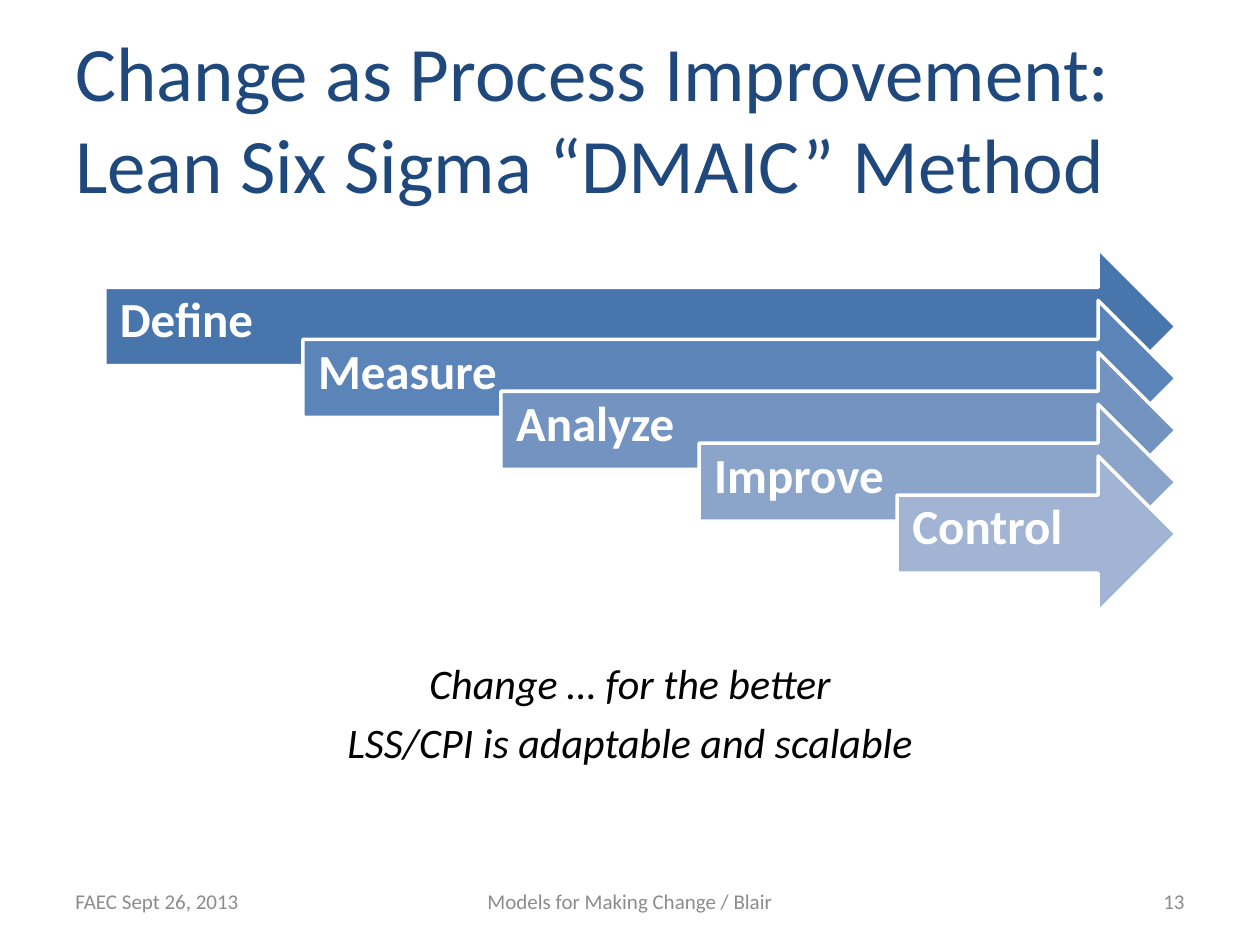
import pptx
import pptx.dml.color
import pptx.enum.shapes
import pptx.enum.text
import pptx.util

Pt = pptx.util.Pt
ALIGN = pptx.enum.text.PP_ALIGN
ANCHOR = pptx.enum.text.MSO_ANCHOR

COLORS = {"title": "1F497D", "white": "FFFFFF", "footer": "8C8C8C", "body": "000000"}
STEPS = {
    "Define": "4875AC",
    "Measure": "5B84B9",
    "Analyze": "7393C1",
    "Improve": "8BA4CA",
    "Control": "A2B4D4",
}


def rgb(value):
    return pptx.dml.color.RGBColor.from_string(value)


def add_text(page, place, lines, color, font, spacing=None, anchor=ANCHOR.MIDDLE,
             margins=(7.2, 3.6, 7.2, 3.6)):
    box = page.shapes.add_textbox(*map(Pt, place))
    frame = box.text_frame
    frame.word_wrap = True
    frame.vertical_anchor = anchor
    for side, margin in zip(("left", "top", "right", "bottom"), margins):
        setattr(frame, f"margin_{side}", Pt(margin))
    for index, line in enumerate(lines):
        para = frame.add_paragraph() if index else frame.paragraphs[0]
        for name, value in (spacing or {}).items():
            setattr(para, name, value)
        span = para.add_run()
        span.text = line
        for name, value in {"name": "Calibri", **font}.items():
            setattr(span.font, name, value)
        span.font.color.rgb = rgb(COLORS[color])
    return box


deck = pptx.Presentation()
deck.slide_width, deck.slide_height = Pt(720), Pt(540)
page = deck.slides.add_slide(deck.slide_layouts[6])

# Title
add_text(page, (36, 21.6, 648, 90),
         ["Change as Process Improvement: Lean Six Sigma “DMAIC” Method"],
         "title", {"size": Pt(44)})

# Staggered arrows, all ending at the same right edge
arrow_height, right_edge = 89.2, 672.1
head_overlap = arrow_height / 4
for index, (label, fill) in enumerate(STEPS.items()):
    left = 59.9 + 113.2 * index
    top = 142 + 29.65 * index
    width = right_edge - left
    arrow = page.shapes.add_shape(
        pptx.enum.shapes.MSO_SHAPE.RIGHT_ARROW,
        Pt(left), Pt(top), Pt(width), Pt(arrow_height))
    arrow.shadow.inherit = False
    arrow.fill.solid()
    arrow.fill.fore_color.rgb = rgb(fill)
    arrow.line.color.rgb = rgb(COLORS["white"])
    arrow.line.width = Pt(2)
    add_text(page,
             (left, top + head_overlap, width - head_overlap, arrow_height / 2),
             [label], "white", {"size": Pt(28), "bold": True},
             {"line_spacing": 0.9}, margins=(8.64, 8.64, 20.16, 14.4))

# Footer
for left, width, text, alignment in (
    (36, 168, "FAEC Sept 26, 2013", ALIGN.LEFT),
    (246, 228, "Models for Making Change / Blair", ALIGN.CENTER),
    (516, 168, "13", ALIGN.RIGHT),
):
    add_text(page, (left, 500.5, width, 28.75), [text], "footer",
             {"size": Pt(12)}, {"alignment": alignment})

# Closing message
message = add_text(page, (72, 372.2, 576, 71.3),
                   ["Change … for the better", "LSS/CPI is adaptable and scalable"],
                   "body", {"size": Pt(24), "italic": True},
                   {"alignment": ALIGN.CENTER, "space_before": Pt(4.8)},
                   anchor=ANCHOR.TOP)
message.text_frame.auto_size = pptx.enum.text.MSO_AUTO_SIZE.SHAPE_TO_FIT_TEXT

deck.save("out.pptx")
